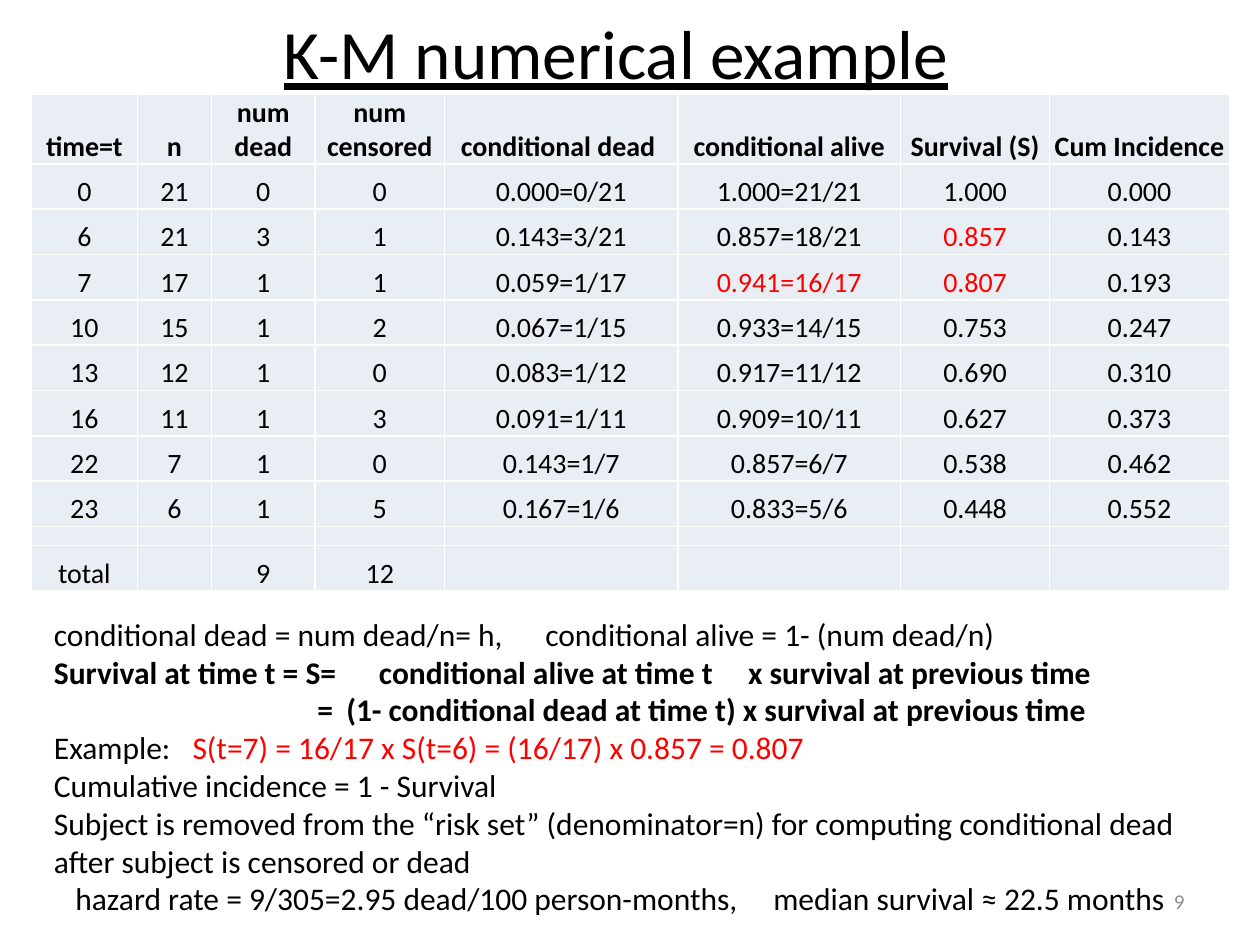
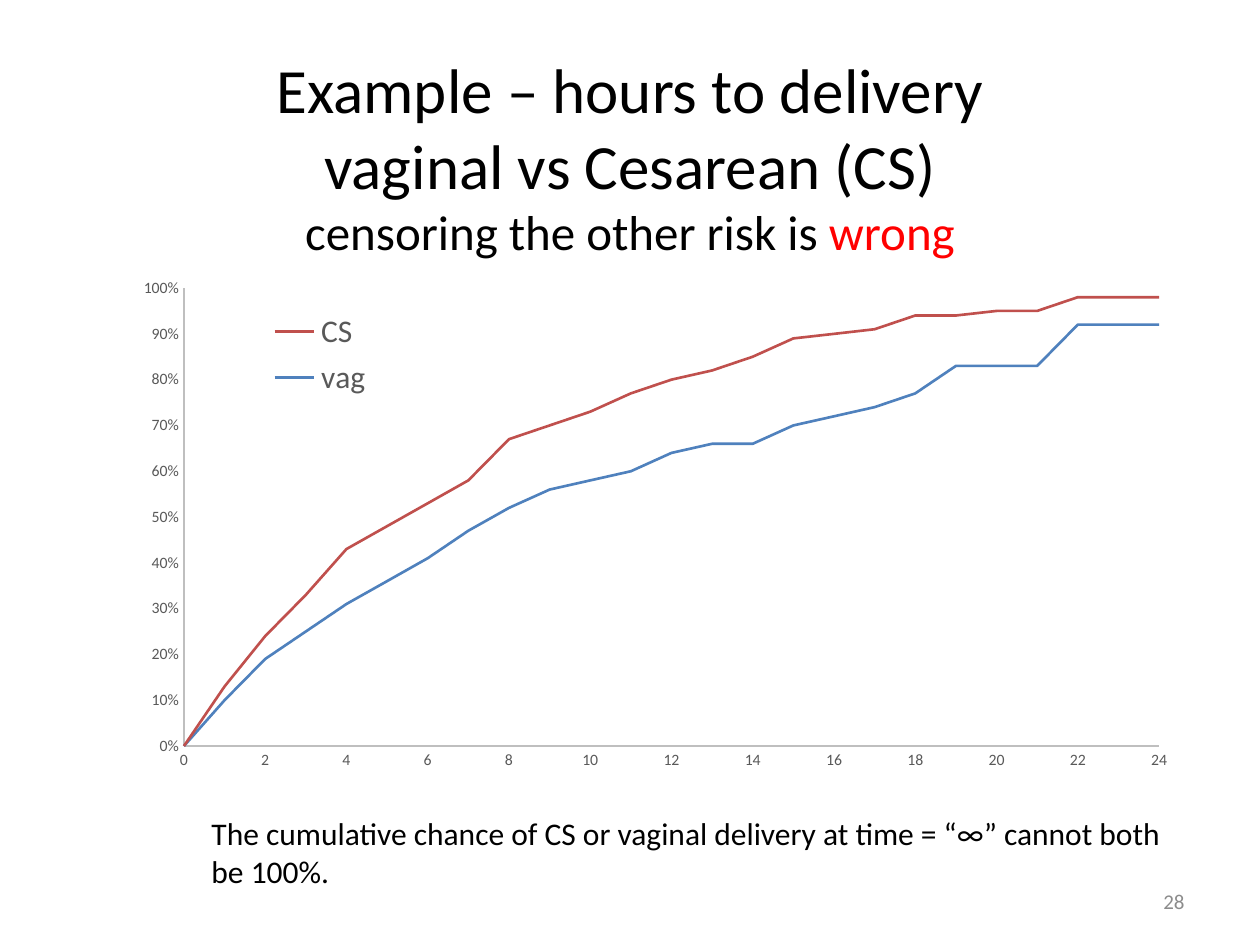
import dataclasses

import lxml.etree
import pptx
import pptx.chart.data
import pptx.dml.color
import pptx.enum.chart
import pptx.enum.text
import pptx.oxml.ns
import pptx.util

Inches = pptx.util.Inches
Pt = pptx.util.Pt
RGB = pptx.dml.color.RGBColor.from_string
qn = pptx.oxml.ns.qn
ALIGN = pptx.enum.text.PP_ALIGN
ANCHOR = pptx.enum.text.MSO_ANCHOR


@dataclasses.dataclass(frozen=True)
class Theme:
    font: str = "Calibri"
    ink: str = "000000"
    accent: str = "FF0000"
    page_number: str = "8C8C8C"
    cell: str = "E9EDF4"
    border: str = "FFFFFF"
    axis_line: str = "BFBFBF"
    chart_text: str = "595959"
    cesarean: str = "C0504D"
    vaginal: str = "4F81BD"
    title_large: float = 39.6
    title: float = 36
    subtitle: float = 28
    body: float = 18
    table: float = 16
    footer: float = 12
    axis: float = 9
    spacer: float = 8


theme = Theme()


def write(frame, paragraphs, size, align=ALIGN.LEFT, anchor=ANCHOR.TOP):
    """Fill a frame; each paragraph is a list of (text, font overrides), tabs given in inches."""
    frame.word_wrap = True
    frame.vertical_anchor = anchor
    for index, (runs, tabs) in enumerate(paragraphs):
        para = frame.paragraphs[0] if index == 0 else frame.add_paragraph()
        para.alignment = align
        if tabs:
            stops = lxml.etree.SubElement(para._p.get_or_add_pPr(), qn("a:tabLst"))
            for position in tabs:
                lxml.etree.SubElement(stops, qn("a:tab"), pos=str(Inches(position)), algn="l")
        for text, style in runs:
            for line_index, line in enumerate(text.split("\n")):
                if line_index:
                    para.add_line_break()
                if not line:
                    continue
                span = para.add_run()
                span.text = line
                span.font.name = theme.font
                span.font.size = Pt(style.get("size", size))
                span.font.bold = style.get("bold", False)
                span.font.underline = style.get("underline", False)
                span.font.color.rgb = RGB(style.get("color", theme.ink))


def set_layout(parent, index, x, y, width, height, inner=False):
    """Place a chart part at fractions of the chart area."""
    for old in parent.findall(qn("c:layout")):
        parent.remove(old)
    layout = lxml.etree.Element(qn("c:layout"))
    manual = lxml.etree.SubElement(layout, qn("c:manualLayout"))
    settings = {"xMode": "edge", "yMode": "edge", "x": x, "y": y, "w": width, "h": height}
    if inner:
        settings = {"layoutTarget": "inner", **settings}
    for name, value in settings.items():
        lxml.etree.SubElement(manual, qn(f"c:{name}"), val=str(value))
    parent.insert(index, layout)


deck = pptx.Presentation()
deck.slide_width = Inches(10)
deck.slide_height = Inches(7.5)

red = {"color": theme.accent}
bold = {"bold": True}

# Titles and page numbers
titles = [
    ((0.39, 0.08, 9, 0.67), theme.title_large, "9",
     [("K-M numerical example", {"underline": True})]),
    ((0.5, 0.3, 9, 1.87), theme.title, "28",
     [("Example – hours to delivery\nvaginal vs Cesarean (CS)\n", {}),
      ("censoring the other risk is ", {"size": theme.subtitle}),
      ("wrong", {"size": theme.subtitle, **red})]),
]
pages = []
for place, size, number, runs in titles:
    page = deck.slides.add_slide(deck.slide_layouts[6])
    title_box = page.shapes.add_textbox(*map(Inches, place))
    write(title_box.text_frame, [(runs, [])], size, ALIGN.CENTER, ANCHOR.MIDDLE)
    number_box = page.shapes.add_textbox(*map(Inches, (7.17, 6.95, 2.33, 0.4)))
    write(number_box.text_frame, [([(number, {"color": theme.page_number})], [])],
          theme.footer, ALIGN.RIGHT, ANCHOR.MIDDLE)
    pages.append(page)
survival_page, delivery_page = pages

# Kaplan-Meier table
survival_rows = [
    ["time=t", "n", "num dead", "num censored", "conditional dead ",
     "conditional alive", "Survival (S)", "Cum Incidence"],
    ["0", "21", "0", "0", "0.000=0/21", "1.000=21/21", "1.000", "0.000"],
    ["6", "21", "3", "1", "0.143=3/21", "0.857=18/21", "0.857", "0.143"],
    ["7", "17", "1", "1", "0.059=1/17", "0.941=16/17", "0.807", "0.193"],
    ["10", "15", "1", "2", "0.067=1/15", "0.933=14/15", "0.753", "0.247"],
    ["13", "12", "1", "0", "0.083=1/12", "0.917=11/12", "0.690", "0.310"],
    ["16", "11", "1", "3", "0.091=1/11", "0.909=10/11", "0.627", "0.373"],
    ["22", "7", "1", "0", "0.143=1/7", "0.857=6/7", "0.538", "0.462"],
    ["23", "6", "1", "5", "0.167=1/6", "0.833=5/6", "0.448", "0.552"],
    [""] * 8,
    ["total", "", "9", "12", "", "", "", ""],
]
highlighted = {(2, 6), (3, 5), (3, 6)}
column_widths = [0.84, 0.59, 0.82, 1.03, 1.85, 1.77, 1.18, 1.43]
row_heights = [0.55] + [0.36] * 8 + [0.15, 0.36]

table = survival_page.shapes.add_table(
    len(row_heights), len(column_widths), Inches(0.25), Inches(0.75),
    Inches(sum(column_widths)), Inches(sum(row_heights))).table
table.first_row = False
table.horz_banding = False
for column, width in zip(table.columns, column_widths):
    column.width = Inches(width)
for row, height in zip(table.rows, row_heights):
    row.height = Inches(height)

for row_index, values in enumerate(survival_rows):
    for column_index, value in enumerate(values):
        cell = table.cell(row_index, column_index)
        cell.margin_left = cell.margin_right = cell.margin_top = Inches(0.01)
        cell.margin_bottom = 0
        cell.vertical_anchor = ANCHOR.BOTTOM
        properties = cell._tc.get_or_add_tcPr()
        for side in ("lnL", "lnR", "lnT", "lnB"):
            edge = lxml.etree.SubElement(properties, qn(f"a:{side}"), w=str(Pt(1)))
            paint = lxml.etree.SubElement(edge, qn("a:solidFill"))
            lxml.etree.SubElement(paint, qn("a:srgbClr"), val=theme.border)
        cell.fill.solid()
        cell.fill.fore_color.rgb = RGB(theme.cell)
        if value:
            style = {"bold": row_index == 0}
            if (row_index, column_index) in highlighted:
                style.update(red)
            write(cell.text_frame, [([(value, style)], [])], theme.table,
                  ALIGN.CENTER, ANCHOR.BOTTOM)
        else:
            lxml.etree.SubElement(cell.text_frame.paragraphs[0]._p, qn("a:endParaRPr"),
                                  sz=str(theme.spacer * 100))

# Formulas under the table
formulas = [
    ([("conditional dead = num dead/n= h,\tconditional alive = 1- (num dead/n)", {})], [3.9]),
    ([("Survival at time t = S=\tconditional alive at time t\tx survival at previous time",
       bold)], [2.58, 5.51]),
    ([("\t=\t(1- conditional dead at time t) x survival at previous time", bold)], [2.09, 2.32]),
    ([("Example:\t", {}), ("S(t=7) = 16/17 x S(t=6) = (16/17) x 0.857 = 0.807", red)], [1.1]),
    ([("Cumulative incidence = 1 - Survival", {})], []),
    ([("Subject is removed from the “risk set” (denominator=n) for computing "
       "conditional dead after subject is censored or dead", {})], []),
    ([("\thazard rate = 9/305=2.95 dead/100 person-months,\tmedian survival ≈ 22.5 months", {})],
     [0.17, 5.71]),
]
formula_box = survival_page.shapes.add_textbox(*map(Inches, (0.33, 4.83, 9.17, 2.52)))
write(formula_box.text_frame, formulas, theme.body)

# Cumulative delivery chart, one value per hour
cumulative = {
    "CS": (theme.cesarean,
           [0, 0.13, 0.24, 0.33, 0.43, 0.48, 0.53, 0.58, 0.67, 0.7, 0.73, 0.77, 0.8,
            0.82, 0.85, 0.89, 0.9, 0.91, 0.94, 0.94, 0.95, 0.95, 0.98, 0.98, 0.98]),
    "vag": (theme.vaginal,
            [0, 0.1, 0.19, 0.25, 0.31, 0.36, 0.41, 0.47, 0.52, 0.56, 0.58, 0.6, 0.64,
             0.66, 0.66, 0.7, 0.72, 0.74, 0.77, 0.83, 0.83, 0.83, 0.92, 0.92, 0.92]),
}
chart_data = pptx.chart.data.XyChartData()
for name, (color, shares) in cumulative.items():
    series_data = chart_data.add_series(name)
    for hour, share in enumerate(shares):
        series_data.add_data_point(hour, share)

chart = delivery_page.shapes.add_chart(
    pptx.enum.chart.XL_CHART_TYPE.XY_SCATTER_LINES_NO_MARKERS,
    *map(Inches, (0.47, 1.98, 9, 4.38)), chart_data).chart
chart.has_title = False
chart.font.name = theme.font
chart.font.size = Pt(10)
chart.plots[0].vary_by_categories = False
for series in chart.plots[0].series:
    series.smooth = False
    series.marker.style = pptx.enum.chart.XL_MARKER_STYLE.NONE
    series.format.line.width = Pt(1.5)
    series.format.line.color.rgb = RGB(cumulative[series.name][0])

for axis, maximum, step, number_format in (
        (chart.category_axis, 24, 2, "General"), (chart.value_axis, 1, 0.1, "0%")):
    axis.minimum_scale = 0
    axis.maximum_scale = maximum
    axis.major_unit = step
    axis.has_major_gridlines = False
    axis.major_tick_mark = pptx.enum.chart.XL_TICK_MARK.NONE
    axis.minor_tick_mark = pptx.enum.chart.XL_TICK_MARK.NONE
    axis.format.line.color.rgb = RGB(theme.axis_line)
    axis.format.line.width = Pt(0.75)
    axis.tick_labels.number_format = number_format
    axis.tick_labels.number_format_is_linked = False
    axis.tick_labels.font.name = theme.font
    axis.tick_labels.font.size = Pt(theme.axis)
    axis.tick_labels.font.color.rgb = RGB(theme.chart_text)

chart.has_legend = True
legend = chart.legend
legend.position = pptx.enum.chart.XL_LEGEND_POSITION.RIGHT
legend.include_in_layout = False
legend.font.name = theme.font
legend.font.size = Pt(theme.body)
legend.font.color.rgb = RGB(theme.chart_text)
set_layout(legend._element, 1, 0.17, 0.1, 0.12, 0.18)
set_layout(chart._chartSpace.chart.plotArea, 0, 0.11, 0.07, 0.86, 0.83, inner=True)

caption_box = delivery_page.shapes.add_textbox(*map(Inches, (1.58, 6.41, 7.75, 0.71)))
write(caption_box.text_frame,
      [([("The cumulative chance of CS or vaginal delivery at time = “∞” cannot both be 100%.",
          {})], [])], theme.body)

deck.save("out.pptx")
